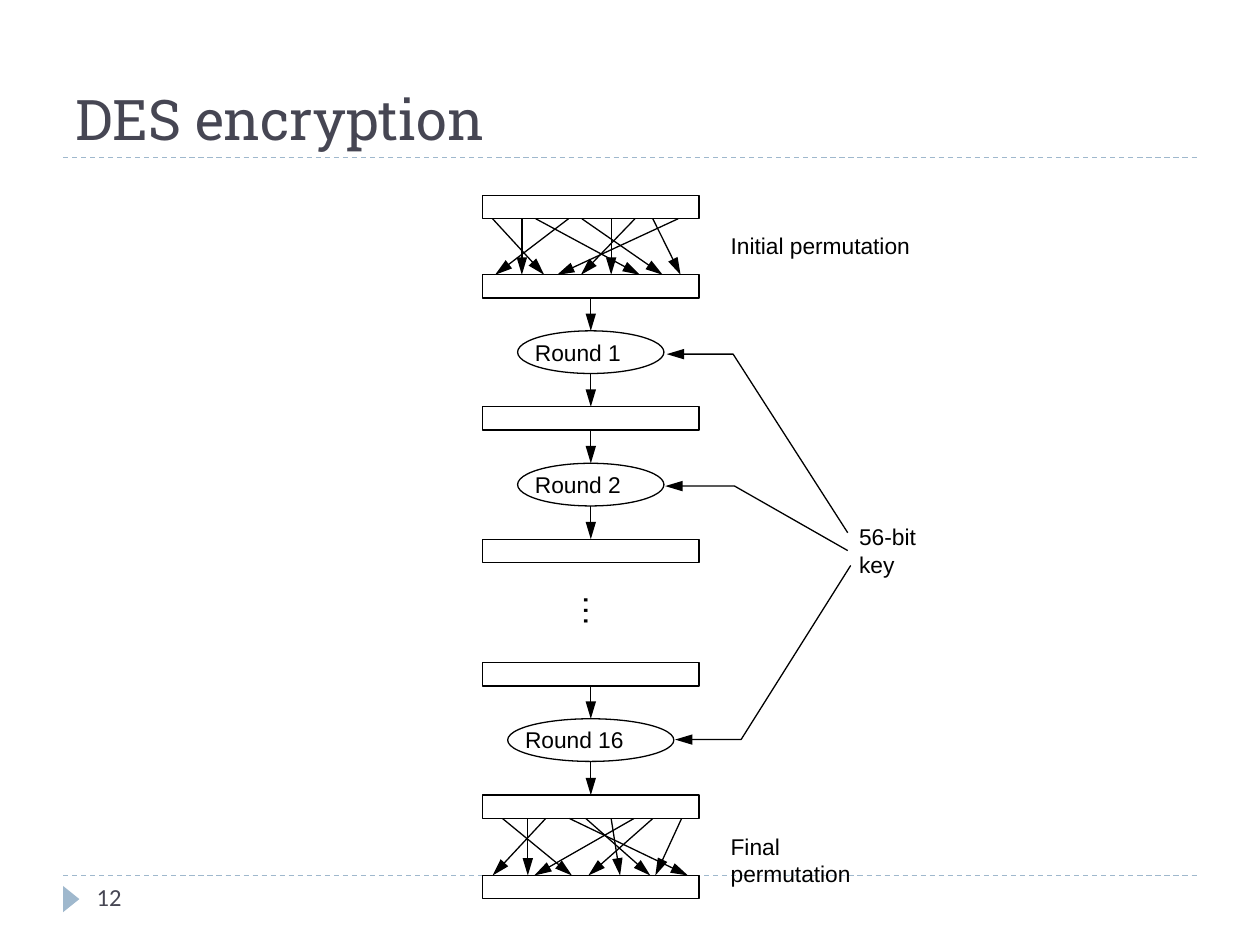
"""Build the DES encryption slide."""
from dataclasses import dataclass

from lxml import etree
from pptx import Presentation
from pptx.dml.color import RGBColor
from pptx.enum.dml import MSO_LINE
from pptx.enum.shapes import MSO_CONNECTOR, MSO_SHAPE
from pptx.enum.text import MSO_ANCHOR
from pptx.oxml.ns import qn
from pptx.shapes.autoshape import Shape
from pptx.shapes.connector import Connector
from pptx.shapes.shapetree import SlideShapes
from pptx.util import Cm, Pt

BLACK = RGBColor(0x00, 0x00, 0x00)
SLATE = RGBColor(0x46, 0x46, 0x53)
BLUE = RGBColor(0x9F, 0xB8, 0xCD)
DASH = MSO_LINE.DASH
STRAIGHT = MSO_CONNECTOR.STRAIGHT
RECT, OVAL, TRIANGLE = MSO_SHAPE.RECTANGLE, MSO_SHAPE.OVAL, MSO_SHAPE.ISOSCELES_TRIANGLE
TOP, BOTTOM = MSO_ANCHOR.TOP, MSO_ANCHOR.BOTTOM
AXIS = 11.91
BAR_WIDTH, BAR_HEIGHT = 4.37, 0.47
OVAL_HEIGHT = 0.86


@dataclass
class Label:
    text: str
    left: float
    top: float
    width: float
    height: float = 0.56
    size: float = 13
    font: str = "Arial"
    color: RGBColor = BLACK
    anchor: MSO_ANCHOR = TOP
    pad: bool = False
    wrap: bool = True
    turn: float = 0


@dataclass
class Round:
    text: str
    top: float
    width: float
    above: int


@dataclass
class Mix:
    above: int
    moves: list[tuple[float, float]]


BARS = [3.94, 5.54, 8.2, 10.87, 13.36, 16.03, 17.65]
ROUNDS = [
    Round("Round 1", 6.67, 2.95, 1),
    Round("Round 2", 9.34, 2.95, 2),
    Round("Round 16", 14.49, 3.35, 4),
]
MIXES = [
    Mix(0, [(9.93, 10.97), (10.52, 10.52), (11.46, 9.98), (10.8, 12.9), (12.32, 12.32),
            (12.8, 11.71), (13.67, 11.23), (11.73, 13.36), (13.16, 13.72)]),
    Mix(5, [(10.13, 11.53), (10.64, 10.64), (11, 9.93), (11.81, 13.11), (12.32, 12.5),
            (13.16, 11.86), (13.74, 13.21), (12.78, 10.77), (11.48, 13.87)]),
]
KEYS = [
    [(17.09, 10.74), (14.78, 7.14), (13.44, 7.14)],
    [(17.09, 11.1), (14.81, 9.8), (13.41, 9.8)],
    [(17.15, 11.4), (14.94, 14.91), (13.61, 14.91)],
]
LABELS = [
    Label("DES encryption", 1.27, 0.43, 22.86, 2.75, 32, "Roboto Slab", SLATE, BOTTOM, True),
    Label("12", 1.7, 17.65, 5.51, 1.02, 14, "Calibri", SLATE, pad=True),
    Label("Initial permutation", 14.73, 4.67, 4),
    Label("56-bit", 17.32, 10.54, 1.4),
    Label("key", 17.32, 11.1, 1),
    Label("Final permutation", 14.73, 16.79, 3.33, 1.1),
    Label("…", 11.25, 11.91, 0.66, 0.81, 19, wrap=False, turn=270),
]


def add_head(shape: Shape | Connector) -> None:
    """Put an arrowhead at the end of a line."""
    line = shape._element.spPr.find(qn("a:ln"))
    etree.SubElement(line, qn("a:tailEnd"), type="triangle", w="med", len="lg")


def add_line(shapes: SlideShapes, x1: float, y1: float, x2: float, y2: float,
             color: RGBColor = BLACK) -> Connector:
    """Draw a thin straight line without a shadow."""
    line = shapes.add_connector(STRAIGHT, Cm(x1), Cm(y1), Cm(x2), Cm(y2))
    line.line.color.rgb = color
    line.line.width = Pt(0.75)
    etree.SubElement(line._element.spPr, qn("a:effectLst"))
    return line


def add_arrow(shapes: SlideShapes, x1: float, y1: float, x2: float, y2: float) -> Connector:
    """Draw a straight arrow."""
    line = add_line(shapes, x1, y1, x2, y2)
    add_head(line)
    return line


def add_rule(shapes: SlideShapes, top: float) -> None:
    """Draw a dashed rule across the slide."""
    add_line(shapes, 1.27, top, 24.13, top, BLUE).line.dash_style = DASH


def set_outline(shape: Shape) -> None:
    """Leave only a thin black outline."""
    shape.shadow.inherit = False
    shape.fill.background()
    shape.line.color.rgb = BLACK
    shape.line.width = Pt(0.75)


def add_box(shapes: SlideShapes, kind: MSO_SHAPE, top: float, width: float,
            height: float) -> Shape:
    """Draw an outlined shape centred on the axis."""
    box = shapes.add_shape(kind, Cm(AXIS - width / 2), Cm(top), Cm(width), Cm(height))
    set_outline(box)
    return box


def add_label(shapes: SlideShapes, label: Label) -> None:
    """Write a text box."""
    box = shapes.add_textbox(Cm(label.left), Cm(label.top), Cm(label.width), Cm(label.height))
    box.rotation = label.turn
    frame = box.text_frame
    frame.word_wrap = label.wrap
    frame.vertical_anchor = label.anchor
    if not label.pad:
        frame.margin_left = frame.margin_right = Cm(0)
        frame.margin_top = frame.margin_bottom = Cm(0)
    frame.text = label.text
    font = frame.paragraphs[0].runs[0].font
    font.name, font.size = label.font, Pt(label.size)
    font.color.rgb = label.color


def add_round(shapes: SlideShapes, item: Round, bars: list[Shape]) -> None:
    """Draw a round between two bars with its arrows."""
    oval = add_box(shapes, OVAL, item.top, item.width, OVAL_HEIGHT)
    add_label(shapes, Label(item.text, AXIS - item.width / 2 + 0.35, item.top + 0.15, 2.2))
    enter = add_arrow(shapes, AXIS, BARS[item.above] + BAR_HEIGHT, AXIS, item.top)
    enter.begin_connect(bars[item.above], 2)
    enter.end_connect(oval, 0)
    leave = add_arrow(shapes, AXIS, item.top + OVAL_HEIGHT, AXIS, BARS[item.above + 1])
    leave.end_connect(bars[item.above + 1], 0)


def add_mix(shapes: SlideShapes, mix: Mix) -> None:
    """Draw the crossing arrows of a permutation."""
    for start, end in mix.moves:
        add_arrow(shapes, start, BARS[mix.above] + BAR_HEIGHT, end, BARS[mix.above + 1])


def add_key(shapes: SlideShapes, points: list[tuple[float, float]]) -> None:
    """Draw a bent arrow from the key to a round."""
    first, *rest = [(Cm(x), Cm(y)) for x, y in points]
    pen = shapes.build_freeform(*first)
    pen.add_line_segments(rest, close=False)
    bend = pen.convert_to_shape()
    set_outline(bend)
    add_head(bend)


def main() -> None:
    """Build and save the slide."""
    deck = Presentation()
    deck.slide_width, deck.slide_height = Cm(25.4), Cm(19.05)
    shapes = deck.slides.add_slide(deck.slide_layouts[6]).shapes
    for top in (17.65, 3.18):
        add_rule(shapes, top)
    mark = shapes.add_shape(TRIANGLE, Cm(1.17), Cm(17.96), Cm(0.53), Cm(0.33))
    mark.rotation = 90
    mark.shadow.inherit = False
    mark.fill.solid()
    mark.fill.fore_color.rgb = BLUE
    mark.line.fill.background()
    bars = [add_box(shapes, RECT, top, BAR_WIDTH, BAR_HEIGHT) for top in BARS]
    for mix in MIXES:
        add_mix(shapes, mix)
    for item in ROUNDS:
        add_round(shapes, item, bars)
    for points in KEYS:
        add_key(shapes, points)
    for label in LABELS:
        add_label(shapes, label)
    deck.save("out.pptx")


if __name__ == "__main__":
    main()
